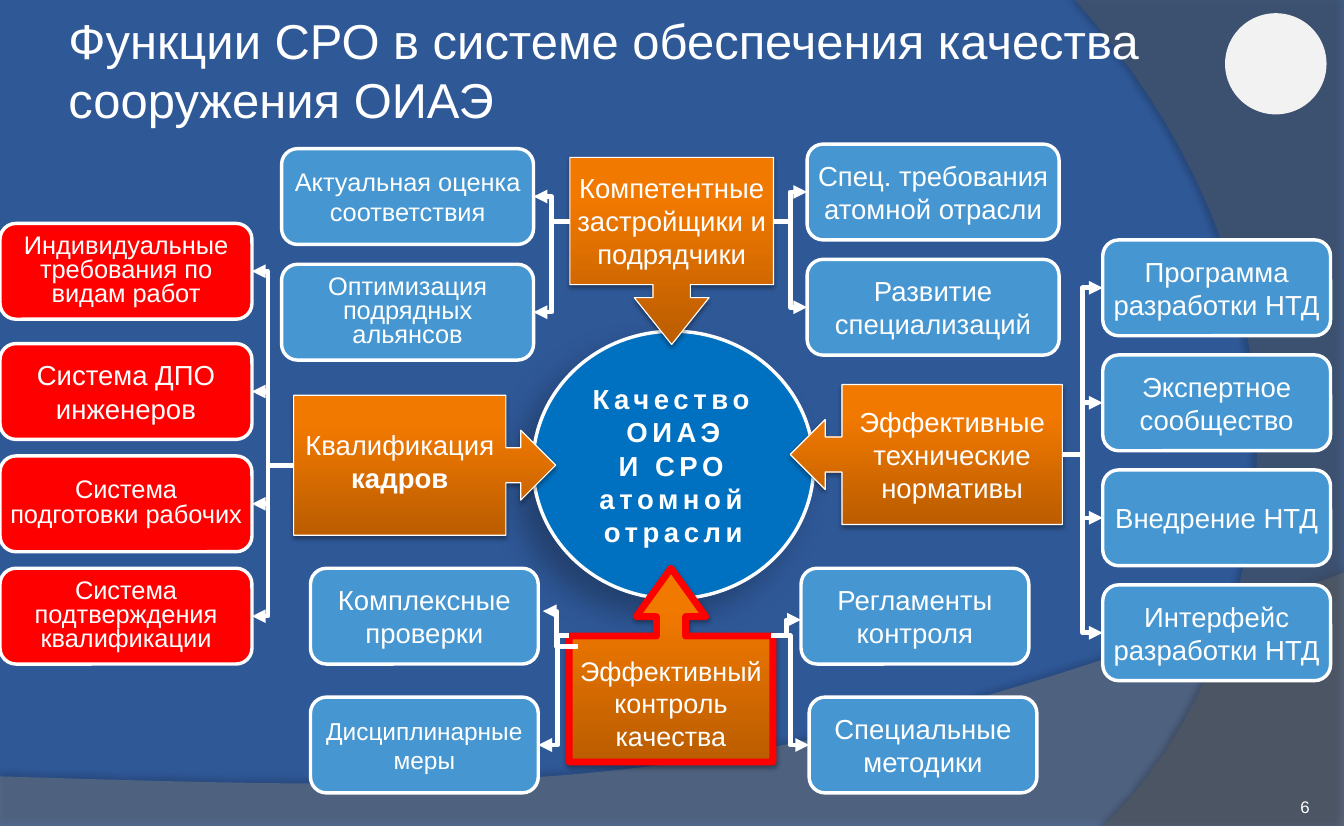
from copy import deepcopy
from dataclasses import dataclass
from typing import Any, Optional

from lxml.etree import SubElement
from pptx import Presentation
from pptx.dml.color import RGBColor
from pptx.enum.shapes import MSO_CONNECTOR as Link, MSO_SHAPE as Shape
from pptx.enum.text import MSO_ANCHOR as Anchor, MSO_AUTO_SIZE as AutoSize, PP_ALIGN as Align
from pptx.oxml.ns import qn
from pptx.util import Inches, Pt

# The grid has 100 columns and 100 rows.
WIDTH, HEIGHT = Inches(12.21), Inches(7.5)
CARD_ROWS = 11.6


@dataclass(frozen=True)
class Theme:
    font: str = "Arial"
    back: str = "2F5897"
    white: str = "FFFFFF"
    badge: str = "F2F2F2"
    wave: str = "7F7F7F"
    edge: str = "5E5E5E"
    core: str = "0070C0"
    blue: str = "4596D1"
    red: str = "FF0000"
    orange: tuple = ((0, "BB5D00"), (0.8, "F27900"), (1, "F37A00"))
    title: float = 32
    body: float = 18
    control: float = 17.6
    compact: float = 16.6
    small: float = 16
    number: float = 11
    thin: float = 0.75
    border: float = 2.25
    link: float = 3
    strong: float = 4.5


THEME = Theme()


@dataclass(frozen=True)
class Shadow:
    alpha: float
    blur: float
    distance: float
    angle: int


@dataclass(frozen=True)
class Area:
    col: float
    row: float
    cols: float
    rows: float


@dataclass(frozen=True)
class Callout:
    kind: Any
    area: Area
    adjust: tuple
    text: str = ""
    size: float = THEME.body
    line: str = THEME.white
    weight: float = THEME.thin
    top_inset: float = 0.5


@dataclass(frozen=True)
class Card:
    row: float
    text: str
    size: float = THEME.body
    spacing: Optional[float] = None


@dataclass(frozen=True)
class Branch:
    """Cards in one column, each linked to the same hub point."""
    hub: tuple
    col: float
    cols: float
    cards: tuple
    bend: float = 0.5
    fill: str = THEME.blue
    nudge: tuple = (0, 0)


CALLOUTS = (
    Callout(Shape.LEFT_ARROW_CALLOUT, Area(58.8, 46.55, 20.25, 16.95), (0.25, 0.25, 0.25, 0.81),
            "Эффективные технические нормативы"),
    Callout(Shape.DOWN_ARROW_CALLOUT, Area(42.4, 19.05, 15.15, 22.65), (0.2, 0.2, 0.25, 0.68),
            "Компетентные застройщики и подрядчики"),
    Callout(Shape.UP_ARROW_CALLOUT, Area(42.35, 68.8, 15.15, 23.45), (0.15, 0.18, 0.25, 0.65),
            "Эффективный контроль качества", THEME.control, THEME.red, THEME.strong, 1.5),
    Callout(Shape.RIGHT_ARROW_CALLOUT, Area(21.85, 47.85, 19.5, 16.95), (0.25, 0.25, 0.25, 0.81)),
)
BRANCHES = (
    Branch((43, 78.25), 23.1, 16.95, (Card(68.8, "Комплексные проверки"),), 0.61,
           nudge=(0.35, -0.6)),
    Branch((42.35, 76.95), 23.1, 16.95,
           (Card(84.4, "Дисциплинарные меры", THEME.small),), 0.37),
    Branch((57.4, 76.95), 59.6, 16.95, (Card(68.8, "Регламенты контроля"),), nudge=(0, 0.45)),
    Branch((57.4, 76.95), 60.2, 16.95, (Card(84.4, "Специальные методики"),)),
    Branch((42.4, 26.8), 20.95, 18.75, (
        Card(18, "Актуальная оценка соответствия", THEME.compact),
        Card(32, "Оптимизация подрядных альянсов", THEME.compact, 0.8))),
    Branch((57.55, 26.8), 60.05, 18.75, (
        Card(17.45, "Спец. требования атомной отрасли"),
        Card(31.4, "Развитие специализаций"))),
    Branch((79.05, 55.05), 82.05, 16.95, tuple(
        Card(29.05 + 13.92 * step, text) for step, text in enumerate((
            "Программа разработки НТД", "Экспертное сообщество",
            "Внедрение НТД", "Интерфейс разработки НТД")))),
    Branch((21.85, 56.4), 0, 18.75, (
        Card(27.05, "Индивидуальные требования по видам работ", THEME.compact, 0.8),
        Card(41.6, "Система ДПО инженеров"),
        Card(55.2, "Система подготовки рабочих", THEME.compact, 0.8),
        Card(68.8, "Система подтверждения квалификации", THEME.compact, 0.8)),
        0.62, THEME.red),
)


def x(col: float) -> int:
    return round(WIDTH * col / 100)


def y(row: float) -> int:
    return round(HEIGHT * row / 100)


def place(area: Area) -> tuple:
    return x(area.col), y(area.row), x(area.cols), y(area.rows)


def assign(target: Any, **values: Any) -> None:
    for name, value in values.items():
        setattr(target, name, value)


def write(box: Any, lines: tuple, size: float, align: Any = Align.CENTER, inset: float = 0.04,
          anchor: Any = Anchor.MIDDLE, spacing: Optional[float] = None) -> None:
    frame, margin = box.text_frame, Inches(inset)
    assign(frame, text="\n".join(lines), word_wrap=True, auto_size=AutoSize.NONE,
           vertical_anchor=anchor, margin_left=margin, margin_right=margin,
           margin_top=margin, margin_bottom=margin)
    for para in frame.paragraphs:
        assign(para, alignment=align, line_spacing=spacing)
        for span in para.runs:
            assign(span.font, size=Pt(size), name=THEME.font)
            span.font.color.rgb = RGBColor.from_string(THEME.white)


def paint(shape: Any, fill: Any, line: Optional[str] = None, weight: float = THEME.border,
          shadow: Optional[Shadow] = None, alpha: Optional[int] = None) -> None:
    """Set a plain or gradient fill, the outline, and an optional shadow."""
    if isinstance(fill, str):
        shape.fill.solid()
        shape.fill.fore_color.rgb = RGBColor.from_string(fill)
        if alpha:
            color = shape.element.spPr.find(qn("a:solidFill"))[0]
            SubElement(color, qn("a:alpha"), val=str(alpha * 1000))
    else:
        shape.fill.gradient()
        shape.fill.gradient_angle = 90
        stops = next(shape.element.iter(qn("a:gsLst")))
        stops.append(deepcopy(stops[-1]))
        for stop, (position, color) in zip(shape.fill.gradient_stops, fill):
            stop.position = position
            stop.color.rgb = RGBColor.from_string(color)
    if line:
        shape.line.color.rgb = RGBColor.from_string(line)
        shape.line.width = Pt(weight)
    else:
        shape.line.fill.background()
    shape.shadow.inherit = False
    if shadow:
        outer = SubElement(shape.element.spPr.find(qn("a:effectLst")), qn("a:outerShdw"),
                           blurRad=str(Pt(shadow.blur)), dist=str(Pt(shadow.distance)),
                           dir=str(shadow.angle * 60000), rotWithShape="0")
        color = SubElement(outer, qn("a:srgbClr"), val="000000")
        SubElement(color, qn("a:alpha"), val=str(round(shadow.alpha * 1000)))


def add_curved(page: Any, corners: tuple, curve: tuple, fill: str, alpha: int,
               shadow: Shadow) -> None:
    """Draw straight corners closed by a Bezier curve that starts at the last corner."""
    controls, steps = (corners[-1], *curve), 40
    points = list(corners)
    for step in range(1, steps + 1):
        t = step / steps
        weights = ((1 - t) ** 3, 3 * t * (1 - t) ** 2, 3 * t * t * (1 - t), t ** 3)
        points.append(tuple(sum(w * p[axis] for w, p in zip(weights, controls))
                            for axis in (0, 1)))
    outline = [(x(col), y(row)) for col, row in points]
    builder = page.shapes.build_freeform(*outline[0])
    builder.add_line_segments(outline[1:], close=True)
    paint(builder.convert_to_shape(), fill, shadow=shadow, alpha=alpha)


def add_link(page: Any, start: tuple, end: tuple, bend: float) -> None:
    link = page.shapes.add_connector(Link.ELBOW, x(start[0]), y(start[1]), x(end[0]), y(end[1]))
    link.line.color.rgb = RGBColor.from_string(THEME.white)
    link.line.width = Pt(THEME.link)
    props = link.element.spPr
    SubElement(next(props.iter(qn("a:avLst"))), qn("a:gd"), name="adj1",
               fmla=f"val {round(bend * 100000)}")
    SubElement(props.find(qn("a:ln")), qn("a:tailEnd"), type="triangle")
    SubElement(props, qn("a:effectLst"))


def add_branch(page: Any, branch: Branch) -> None:
    side = branch.col if branch.col > branch.hub[0] else branch.col + branch.cols
    for card in branch.cards:
        end = (side + branch.nudge[0], card.row + CARD_ROWS / 2 + branch.nudge[1])
        add_link(page, branch.hub, end, branch.bend)
        area = Area(branch.col, card.row, branch.cols, CARD_ROWS)
        box = page.shapes.add_shape(Shape.ROUNDED_RECTANGLE, *place(area))
        paint(box, branch.fill, THEME.white)
        write(box, (card.text,), card.size, spacing=card.spacing)


def add_callout(page: Any, callout: Callout) -> None:
    box = page.shapes.add_shape(callout.kind, *place(callout.area))
    for index, value in enumerate(callout.adjust):
        box.adjustments[index] = value
    paint(box, THEME.orange, callout.line, callout.weight, Shadow(35, 3.1, 1.8, 90))
    if callout.text:
        write(box, (callout.text,), callout.size)
        box.text_frame.margin_top = y(callout.top_inset)


def add_backdrop(page: Any) -> None:
    page.background.fill.solid()
    page.background.fill.fore_color.rgb = RGBColor.from_string(THEME.back)
    add_curved(page, ((0, 94), (0, 100), (100, 100), (100, 69.3)),
               ((55.9, 97.2), (39.1, 95.9), (0, 94)), THEME.wave, 45, Shadow(35, 4, 3.5, 270))
    add_curved(page, ((100, 0), (100, 100), (82.1, 100)),
               ((93.4, 82.5), (101.7, 40), (80, 0)), THEME.edge, 40, Shadow(45, 4, 4, 180))
    badge = page.shapes.add_shape(Shape.OVAL, *place(Area(91.15, 1.6, 7.55, 12.25)))
    paint(badge, THEME.badge)


def add_headings(page: Any) -> None:
    title = page.shapes.title
    page.shapes.element.append(title.element)
    spot = dict(zip(("left", "top", "width", "height"), place(Area(4.6, 5.2, 81.7, 6.4))))
    assign(title, **spot)
    write(title, ("Функции СРО в системе обеспечения качества сооружения ОИАЭ",),
          THEME.title, Align.LEFT, 0.06)
    number = page.shapes.add_textbox(*place(Area(89.1, 93.6, 8.35, 5.35)))
    write(number, ("6",), THEME.number, Align.RIGHT, 0, Anchor.BOTTOM)


def add_core(page: Any) -> None:
    core = page.shapes.add_shape(Shape.OVAL, *place(Area(39.65, 40.1, 20.9, 32.4)))
    paint(core, THEME.core, THEME.white, shadow=Shadow(25, 19, 15, 136))
    write(core, ("Качество ОИАЭ", "И СРО атомной отрасли"), THEME.body)
    for para in core.text_frame.paragraphs:
        for span in para.runs:
            span.font.bold = True
            span.font._element.set("spc", "300")


def add_staff_label(page: Any) -> None:
    label = page.shapes.add_textbox(*place(Area(21.85, 51.05, 15.8, 9.45)))
    write(label, ("Квалификация", "кадров"), THEME.body)
    label.text_frame.word_wrap = False
    label.text_frame.paragraphs[1].runs[0].font.bold = True


def main() -> None:
    deck = Presentation()
    assign(deck, slide_width=WIDTH, slide_height=HEIGHT)
    page = deck.slides.add_slide(deck.slide_layouts.get_by_name("Title Only"))
    add_backdrop(page)
    add_headings(page)
    add_core(page)
    for callout in CALLOUTS:
        add_callout(page, callout)
    for branch in BRANCHES:
        add_branch(page, branch)
    add_staff_label(page)
    deck.save("out.pptx")


if __name__ == "__main__":
    main()
